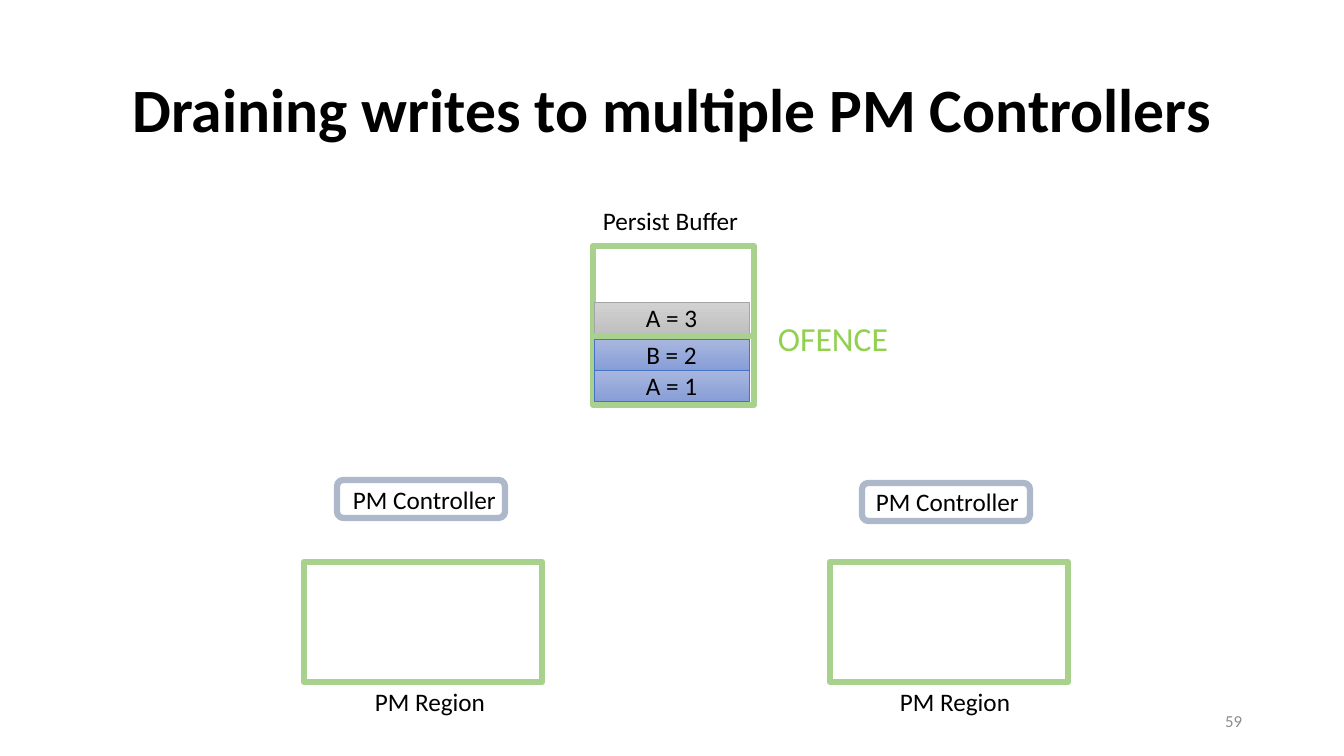
"""Build the slide on draining writes to multiple PM controllers."""
from lxml.etree import SubElement
from pptx import Presentation
from pptx.dml.color import RGBColor
from pptx.enum.shapes import MSO_CONNECTOR, MSO_SHAPE
from pptx.enum.text import MSO_ANCHOR, PP_ALIGN
from pptx.oxml.ns import qn
from pptx.util import Emu, Pt

BLACK = RGBColor(0x00, 0x00, 0x00)
WHITE = RGBColor(0xFF, 0xFF, 0xFF)
GREY = RGBColor(0x8C, 0x8C, 0x8C)
GREEN = RGBColor(0xA9, 0xD1, 0x8E)
FENCE_GREEN = RGBColor(0x92, 0xD0, 0x50)
SLATE = RGBColor(0xAD, 0xB9, 0xCA)
BLUE_STYLE = (RGBColor(0xA8, 0xB7, 0xDF), RGBColor(0x88, 0x9E, 0xD7), RGBColor(0x44, 0x72, 0xC4))
GREY_STYLE = (RGBColor(0xD2, 0xD2, 0xD2), RGBColor(0xC0, 0xC0, 0xC0), RGBColor(0xA5, 0xA5, 0xA5))

TITLE = "Draining writes to multiple PM Controllers"
PAGE_NUMBER = "59"
BUFFER = (593, 246, 161, 159)
FENCE_Y = 336
ENTRY_LEFT, ENTRY_WIDTH, ENTRY_HEIGHT = 594, 155, 31
ENTRIES = [("A = 3", 302, GREY_STYLE), ("B = 2", 339, BLUE_STYLE), ("A = 1", 370, BLUE_STYLE)]
CONTROLLERS = [
    {"box": (337, 480), "name": (343, 479), "region": (304, 562), "label": (365, 681)},
    {"box": (862, 483), "name": (866, 481), "region": (830, 562), "label": (890, 681)},
]
CONTROLLER_SIZE = (168, 38)
REGION_SIZE = (238, 120)
LABEL_SIZE = (192, 40)


def px(length):
    return Emu(round(length * 914400 / 100.8))


def write(shape, text, size=18, color=BLACK, align=PP_ALIGN.LEFT, anchor=MSO_ANCHOR.TOP):
    frame = shape.text_frame
    frame.word_wrap = True
    frame.vertical_anchor = anchor
    paragraph = frame.paragraphs[0]
    paragraph.text = text
    paragraph.alignment = align
    paragraph.font.name = "Calibri"
    paragraph.font.size = Pt(size)
    paragraph.font.color.rgb = color
    return paragraph


def add_text(slide, box, text, **style):
    return write(slide.shapes.add_textbox(*map(px, box)), text, **style)


def add_box(slide, box, line, width=4.5, kind=MSO_SHAPE.RECTANGLE):
    shape = slide.shapes.add_shape(kind, *map(px, box))
    shape.shadow.inherit = False
    shape.fill.solid()
    shape.fill.fore_color.rgb = WHITE
    shape.line.color.rgb = line
    shape.line.width = Pt(width)
    return shape


def add_entry(slide, text, top, style):
    start, end, line = style
    shape = add_box(slide, (ENTRY_LEFT, top, ENTRY_WIDTH, ENTRY_HEIGHT), line, 0.5)
    shape.fill.gradient()
    shape.fill.gradient_angle = 270
    for stop, color in zip(shape.fill.gradient_stops, (start, end)):
        stop.color.rgb = color
        stop.position = 0 if color == start else 1
    write(shape, text, align=PP_ALIGN.CENTER, anchor=MSO_ANCHOR.MIDDLE)


def add_fence(slide):
    left, _, width, _ = BUFFER
    ends = (left + width, FENCE_Y, left, FENCE_Y)
    fence = slide.shapes.add_connector(MSO_CONNECTOR.STRAIGHT, *map(px, ends))
    fence.line.color.rgb = GREEN
    fence.line.width = Pt(4.5)
    SubElement(fence._element.spPr, qn("a:effectLst"))


def main():
    presentation = Presentation()
    presentation.slide_width, presentation.slide_height = px(1344), px(756)
    slide = presentation.slides.add_slide(presentation.slide_layouts[6])

    title = add_text(slide, (93, 40, 1159, 146), TITLE, size=44,
                     align=PP_ALIGN.CENTER, anchor=MSO_ANCHOR.MIDDLE)
    title.font.bold = True
    title.line_spacing = 0.9
    add_text(slide, (950, 701, 302, 40), PAGE_NUMBER, size=12, color=GREY,
             align=PP_ALIGN.RIGHT, anchor=MSO_ANCHOR.MIDDLE)

    add_box(slide, BUFFER, GREEN)
    add_text(slide, (588, 200, 165, 40), "Persist Buffer", align=PP_ALIGN.CENTER)
    for entry in ENTRIES:
        add_entry(slide, *entry)
    add_fence(slide)
    add_text(slide, (768, 313, 410, 50), "OFENCE", size=24, color=FENCE_GREEN)

    for places in CONTROLLERS:
        add_box(slide, places["box"] + CONTROLLER_SIZE, SLATE, kind=MSO_SHAPE.ROUNDED_RECTANGLE)
        add_text(slide, places["name"] + LABEL_SIZE, "PM Controller")
        add_box(slide, places["region"] + REGION_SIZE, GREEN)
        add_text(slide, places["label"] + LABEL_SIZE, "PM Region")

    presentation.save("out.pptx")


if __name__ == "__main__":
    main()
